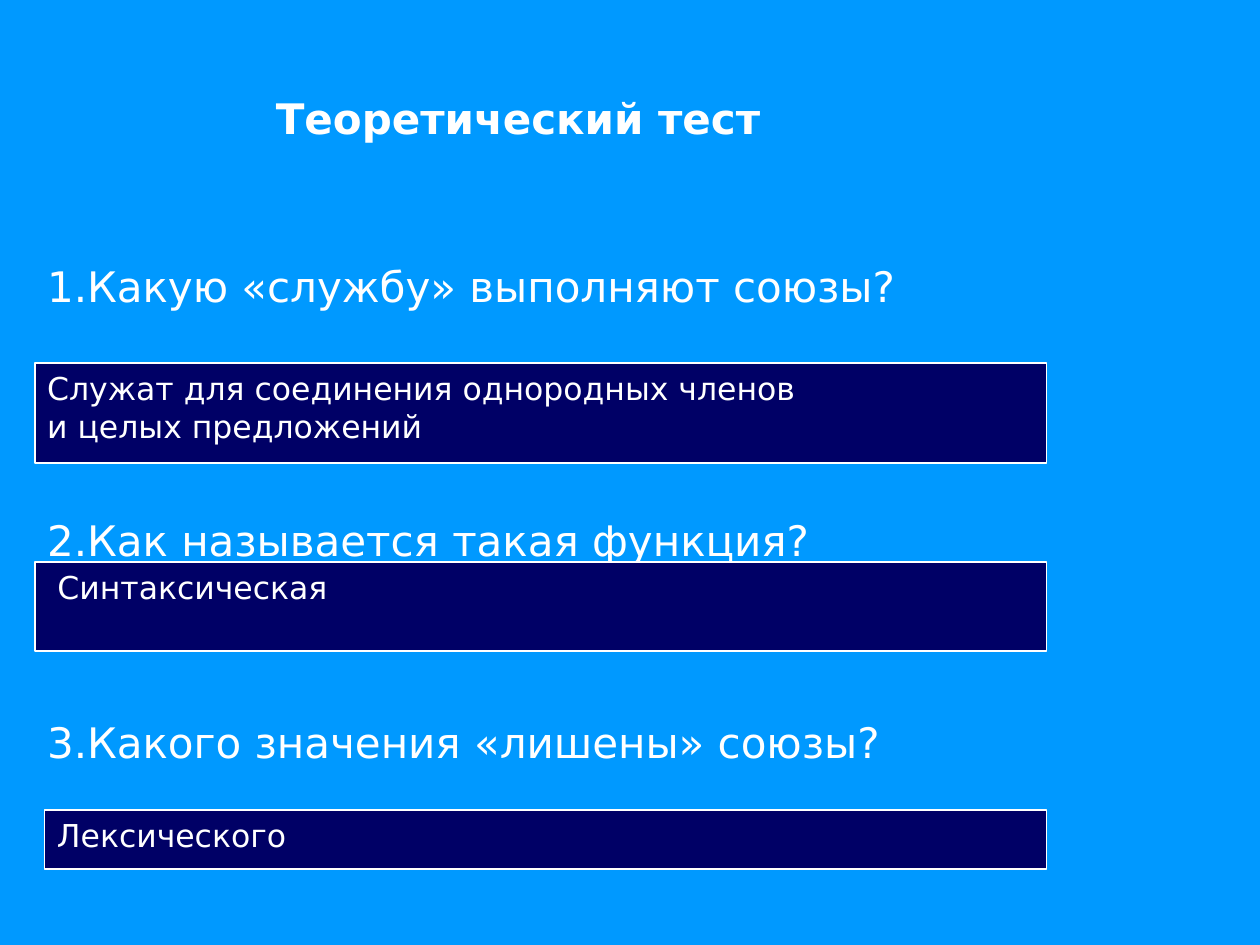
from pptx import Presentation
from pptx.dml.color import RGBColor
from pptx.enum.shapes import MSO_SHAPE
from pptx.enum.text import MSO_ANCHOR, PP_ALIGN
from pptx.util import Cm, Pt

FONT = "DejaVu Sans"
WHITE, NAVY, SKY = "FFFFFF", "000066", "0099FF"
RIGHT = 21.1  # shared right edge of the answer bars, cm

# Question and the space before it, pt
ASKS = [
    ("1.Какую «службу» выполняют союзы?", 0),
    ("2.Как называется такая функция?", 116),
    ("3.Какого значения «лишены» союзы?", 87),
]
# Lines of the answer, left, top, height and left margin, cm
REPLIES = [
    (["Служат для соединения однородных членов", "и целых предложений"],
     0.7, 7.32, 2.01, 0.25),
    (["Синтаксическая"], 0.7, 11.33, 1.8, 0.46),
    (["Лексического"], 0.9, 16.33, 1.19, 0.25),
]


def color(code):
    return RGBColor.from_string(code)


def write(frame, lines, size=18, bold=False, gaps=None, left=0.25, wrap=True):
    """Fill a text frame with one paragraph per line."""
    frame.word_wrap = wrap
    frame.vertical_anchor = MSO_ANCHOR.TOP
    frame.margin_left = Cm(left)
    for i, line in enumerate(lines):
        par = frame.paragraphs[0] if i == 0 else frame.add_paragraph()
        par.text = line
        par.alignment = PP_ALIGN.LEFT
        par.space_before = Pt(gaps[i] if gaps else 0)
        font = par.font
        font.name, font.size, font.bold = FONT, Pt(size), bold
        font.color.rgb = color(WHITE)


def add_title(slide, text):
    title = slide.shapes.title
    title.left, title.top = Cm(5.31), Cm(1.73)
    title.width, title.height = Cm(11.4), Cm(2.06)
    write(title.text_frame, [text], size=24, bold=True)


def add_asks(slide):
    box = slide.shapes.add_textbox(Cm(0.7), Cm(5.13), Cm(24.7), Cm(10.8))
    texts, gaps = zip(*ASKS)
    write(box.text_frame, texts, size=24, gaps=gaps)


def add_reply(slide, lines, left, top, height, margin):
    bar = slide.shapes.add_shape(
        MSO_SHAPE.RECTANGLE, Cm(left), Cm(top), Cm(RIGHT - left), Cm(height))
    bar.shadow.inherit = False
    bar.fill.solid()
    bar.fill.fore_color.rgb = color(NAVY)
    bar.line.color.rgb = color(WHITE)
    bar.line.width = Pt(1)
    write(bar.text_frame, lines, left=margin, wrap=False)


def main():
    deck = Presentation()
    deck.slide_width, deck.slide_height = Cm(25.4), Cm(19.05)
    slide = deck.slides.add_slide(deck.slide_layouts[5])
    # Background
    slide.background.fill.solid()
    slide.background.fill.fore_color.rgb = color(SKY)
    # Title, questions, then the answers over them
    add_title(slide, "Теоретический тест")
    add_asks(slide)
    for reply in REPLIES:
        add_reply(slide, *reply)
    deck.save("out.pptx")


if __name__ == "__main__":
    main()
